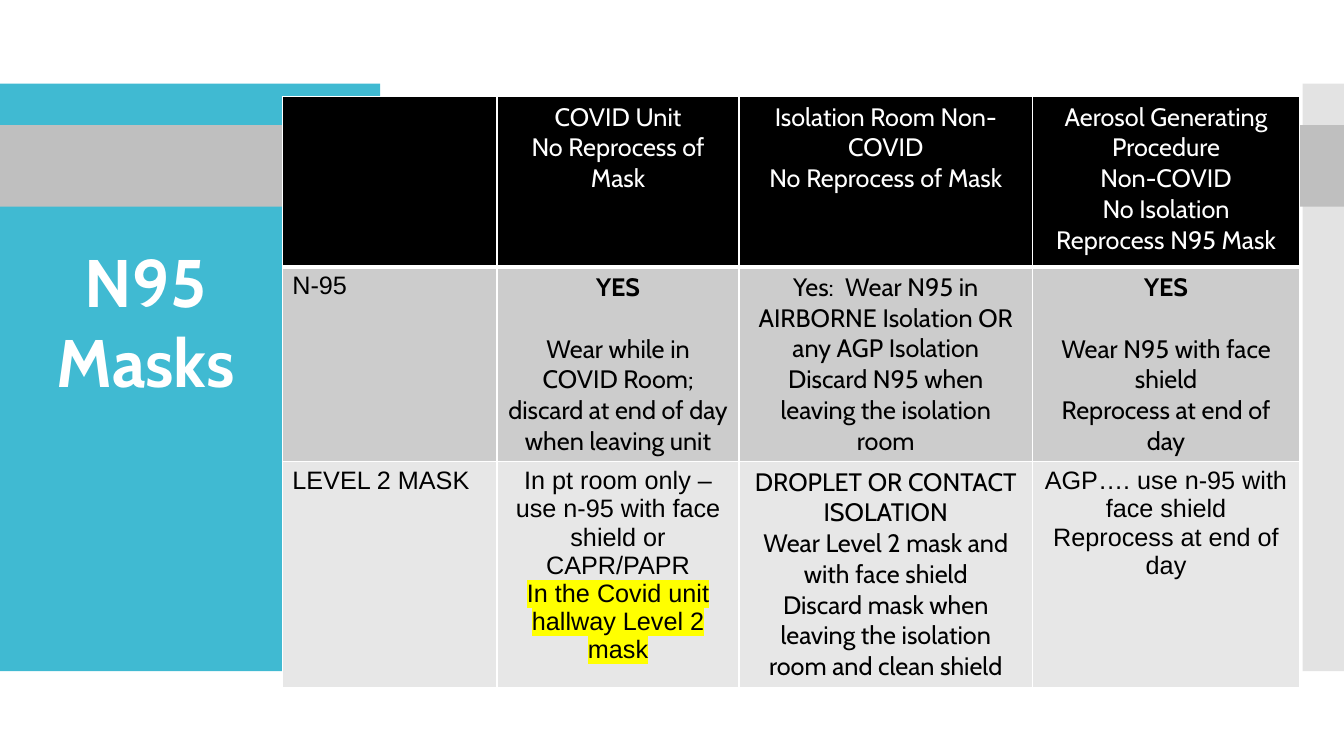
from lxml import etree
from pptx import Presentation
from pptx.dml.color import RGBColor
from pptx.enum.shapes import MSO_SHAPE
from pptx.enum.text import MSO_ANCHOR, MSO_AUTO_SIZE, PP_ALIGN
from pptx.oxml.ns import qn
from pptx.util import Pt

RECT = MSO_SHAPE.RECTANGLE
TOP = MSO_ANCHOR.TOP
GROW = MSO_AUTO_SIZE.SHAPE_TO_FIT_TEXT
LEFT, CENTER = PP_ALIGN.LEFT, PP_ALIGN.CENTER

PX = 9144
TITLE = "N95 Masks"
TITLE_BOX = (32, 233, 225, 172)
BANDS = [
    ((0, 83, 377, 583), "40BAD2", 100),
    ((1292, 83, 42, 583), "C8C8C8", 50),
    ((0, 124, 1333, 81), "BFBFBF", 100),
]
TABLE_AT = (280, 96)
COLS = [213, 240, 291, 265]
ROWS = [169, 169, 201]
ROW_STYLES = [("000000", "FFFFFF", 3), ("CCCCCC", "000000", 1), ("E7E7E7", "000000", 1)]
HEADING = "YES"
HIGHLIGHTED = "In the Covid unit hallway Level 2 mask"
CELLS = [
    [
        ("Cabin", []),
        ("Cabin", ["COVID Unit", "No Reprocess of Mask"]),
        ("Cabin", ["Isolation Room Non-COVID", "No Reprocess of Mask"]),
        ("Cabin", ["Aerosol Generating Procedure", "Non-COVID", "No Isolation",
                   "Reprocess N95 Mask"]),
    ],
    [
        ("Arial", ["N-95"]),
        ("Cabin", [HEADING, "Wear while in COVID Room; discard at end of day when leaving unit"]),
        ("Cabin", ["Yes:  Wear N95 in AIRBORNE Isolation OR any AGP Isolation",
                   "Discard N95 when leaving the isolation room"]),
        ("Cabin", [HEADING, "Wear N95 with face shield", "Reprocess at end of day"]),
    ],
    [
        ("Arial", ["LEVEL 2 MASK"]),
        ("Arial", ["In pt room only – use n-95 with face shield or CAPR/PAPR", HIGHLIGHTED]),
        ("Cabin", ["DROPLET OR CONTACT ISOLATION", "Wear Level 2 mask and with face shield",
                   "Discard mask when leaving the isolation room and clean shield"]),
        ("Arial", ["AGP…. use n-95 with face shield", "Reprocess at end of day"]),
    ],
]


def px(*lengths):
    return [n * PX for n in lengths]


def rgb(value):
    return RGBColor.from_string(value)


def add_run(p, text, size, font, color, bold, highlight=None):
    r = p.add_run()
    r.text = text
    r.font.size = Pt(size)
    r.font.bold = bold
    r.font.color.rgb = rgb(color)
    if highlight:
        mark = etree.SubElement(r.font._element, qn("a:highlight"))
        etree.SubElement(mark, qn("a:srgbClr"), val=highlight)
    r.font.name = font


def add_band(s, box, color, opacity):
    sp = s.shapes.add_shape(RECT, *px(*box))
    sp.shadow.inherit = False
    sp.line.fill.background()
    sp.fill.solid()
    sp.fill.fore_color.rgb = rgb(color)
    if opacity < 100:
        clr = sp.element.spPr.find(qn("a:solidFill"))[0]
        etree.SubElement(clr, qn("a:alpha"), val=str(opacity * 1000))


def set_borders(cell, bottom):
    tcPr = cell._tc.get_or_add_tcPr()
    for i, (side, width) in enumerate([("L", 1), ("R", 1), ("T", 1), ("B", bottom)]):
        ln = etree.Element(qn("a:ln" + side), w=str(Pt(width)))
        fill = etree.SubElement(ln, qn("a:solidFill"))
        etree.SubElement(fill, qn("a:srgbClr"), val="FFFFFF")
        tcPr.insert(i, ln)


def fill_cell(cell, font, lines, style, align):
    background, color, bottom = style
    cell.fill.solid()
    cell.fill.fore_color.rgb = rgb(background)
    set_borders(cell, bottom)
    tf = cell.text_frame
    for i, line in enumerate(lines):
        p = tf.add_paragraph() if i else tf.paragraphs[0]
        p.alignment = align
        if i and lines[i - 1] == HEADING:
            p.space_before = Pt(22)
        highlight = "FFFF00" if line == HIGHLIGHTED else None
        add_run(p, line, 18, font, color, line == HEADING, highlight)


def add_mask_table(s):
    size = (sum(COLS), sum(ROWS))
    table = s.shapes.add_table(len(ROWS), len(COLS), *px(*TABLE_AT, *size)).table
    table.first_row = False
    table.horz_banding = False
    for column, width in zip(table.columns, COLS):
        column.width = width * PX
    for row, height, style, cells in zip(table.rows, ROWS, ROW_STYLES, CELLS):
        row.height = height * PX
        for i, (font, lines) in enumerate(cells):
            fill_cell(row.cells[i], font, lines, style, CENTER if i else LEFT)


def add_title(s):
    sp = s.shapes.title
    sp.left, sp.top, sp.width, sp.height = px(*TITLE_BOX)
    tf = sp.text_frame
    tf.word_wrap = True
    tf.auto_size = GROW
    tf.vertical_anchor = TOP
    p = tf.paragraphs[0]
    p.alignment = CENTER
    add_run(p, TITLE, 48, "Cabin", "FFFFFF", True)
    sp.element.getparent().append(sp.element)


def main():
    prs = Presentation()
    prs.slide_width, prs.slide_height = px(1333, 750)
    s = prs.slides.add_slide(prs.slide_layouts[5])
    for box, color, opacity in BANDS:
        add_band(s, box, color, opacity)
    add_mask_table(s)
    add_title(s)
    prs.save("out.pptx")


if __name__ == "__main__":
    main()
